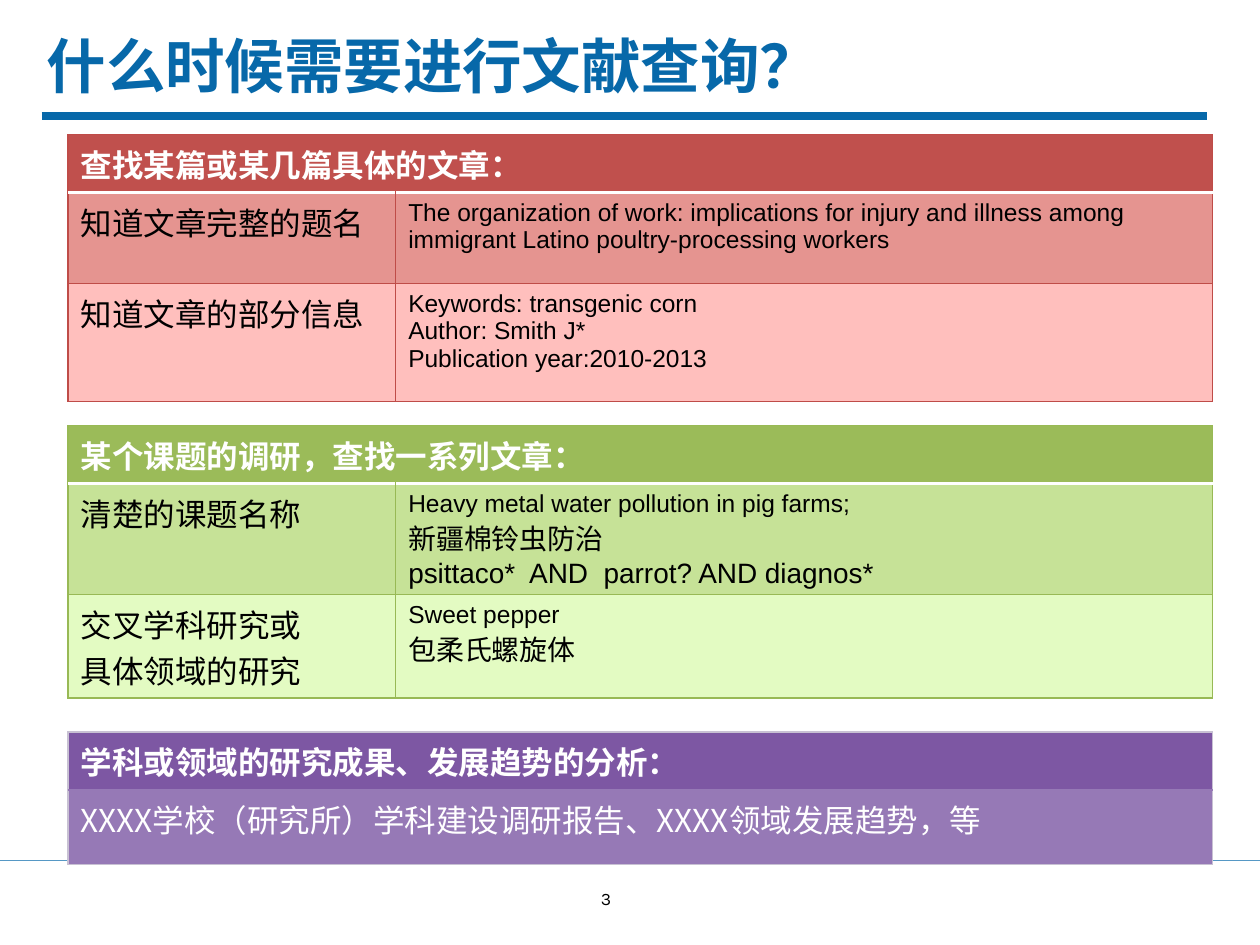
from lxml.etree import SubElement
from pptx import Presentation
from pptx.dml.color import RGBColor
from pptx.enum.shapes import MSO_CONNECTOR
from pptx.enum.text import MSO_ANCHOR, PP_ALIGN
from pptx.oxml import parse_xml
from pptx.oxml.ns import nsdecls, qn
from pptx.util import Inches, Pt

WIDTH, HEIGHT = 10, 7.5
LEFT, TABLE_WIDTH = 0.54, 9.08
HEADER_HEIGHT = 0.46
TWO_COLUMNS = (2.6, 6.48)
CJK, LATIN, NUMBER_FONT = "Noto Sans CJK SC", "Arial", "Karla"
COLORS = {
    "blue": "0768A9", "pale_blue": "5698C5", "white": "FFFFFF", "black": "000000",
    "red": "C0504D", "red_edge": "BF4C48", "red_mid": "E59490", "red_light": "FFBFBD",
    "green": "9BBB59", "green_edge": "98B955", "green_mid": "C6E297", "green_light": "E3FBC2",
    "purple": "7D57A3", "purple_edge": "C8C1D3", "purple_mid": "9679B6",
}


def rgb(name):
    """Return the named colour."""
    return RGBColor.from_string(COLORS[name])


def add_run(paragraph, text, size, color="black", font=CJK, bold=False):
    """Add one formatted run with an East Asian font."""
    run = paragraph.add_run()
    run.text = text
    run.font.size = Pt(size)
    run.font.name = font
    run.font.bold = bold
    run.font.color.rgb = rgb(color)
    SubElement(run.font._element, qn("a:ea")).set("typeface", CJK)


def add_rule(slide, left, right, top, color, weight):
    """Draw a horizontal line."""
    line = slide.shapes.add_connector(
        MSO_CONNECTOR.STRAIGHT, Inches(left), Inches(top), Inches(right), Inches(top))
    line.line.color.rgb = rgb(color)
    line.line.width = Pt(weight)
    SubElement(line._element.spPr, qn("a:effectLst"))


def set_borders(cell, edges):
    """Set left, right, top and bottom borders as (colour, points)."""
    properties = cell._tc.get_or_add_tcPr()
    for index, (side, (color, weight)) in enumerate(zip("LRTB", edges)):
        properties.insert(index, parse_xml(
            f'<a:ln{side} {nsdecls("a")} w="{Pt(weight)}"><a:solidFill>'
            f'<a:srgbClr val="{COLORS[color]}"/></a:solidFill></a:ln{side}>'))


def fill_cell(cell, lines, fill, color="black", bold=False):
    """Fill a cell and write its (text, size, font) lines."""
    cell.fill.solid()
    cell.fill.fore_color.rgb = rgb(fill)
    frame = cell.text_frame
    for index, (text, size, font) in enumerate(lines):
        paragraph = frame.add_paragraph() if index else frame.paragraphs[0]
        add_run(paragraph, text, size, color, font, bold)


def add_topic_table(slide, top, columns, heights, header, rows, fills, edge, divider, color="black"):
    """Add a table with a full-width header above its body rows."""
    row_heights = (HEADER_HEIGHT, *heights)
    table = slide.shapes.add_table(
        len(row_heights), len(columns), Inches(LEFT), Inches(top),
        Inches(TABLE_WIDTH), Inches(sum(row_heights))).table
    table.horz_banding = False
    for column, width in zip(table.columns, columns):
        column.width = Inches(width)
    for row, height in zip(table.rows, row_heights):
        row.height = Inches(height)
    thin = (edge, 0.75)
    for index, row in enumerate(table.rows):
        for cell in row.cells:
            set_borders(cell, (thin, thin, divider if index == 1 else thin,
                               divider if index == 0 else thin))
    if len(columns) > 1:
        table.cell(0, 0).merge(table.cell(0, len(columns) - 1))
    fill_cell(table.cell(0, 0), [(header, 18, CJK)], fills[0], "white", True)
    for row_index, (cells, fill) in enumerate(zip(rows, fills[1:]), 1):
        for column_index, lines in enumerate(cells):
            fill_cell(table.cell(row_index, column_index), lines, fill, color)


def add_title(slide, left, top, width, height):
    """Place the title and the rule below it."""
    title = slide.shapes.title
    title.left, title.top, title.width, title.height = map(Inches, (left, top, width, height))
    frame = title.text_frame
    frame.vertical_anchor = MSO_ANCHOR.MIDDLE
    frame.margin_left = Inches(0.2)
    frame.paragraphs[0].alignment = PP_ALIGN.LEFT
    add_run(frame.paragraphs[0], "什么时候需要进行文献查询？", 34, "blue", bold=True)
    add_rule(slide, 0.33, 9.58, 0.92, "blue", 5)


def add_footer(slide, top):
    """Place the footer line and the page number."""
    add_rule(slide, 0, WIDTH, top, "pale_blue", 0.75)
    box = slide.shapes.add_textbox(Inches(4.62), Inches(top + 0.17), Inches(0.38), Inches(0.27))
    box.text_frame.word_wrap = False
    box.text_frame.paragraphs[0].alignment = PP_ALIGN.CENTER
    add_run(box.text_frame.paragraphs[0], "3", 10, font=NUMBER_FONT)


def main():
    """Build and save the slide."""
    presentation = Presentation()
    presentation.slide_width, presentation.slide_height = Inches(WIDTH), Inches(HEIGHT)
    slide = presentation.slides.add_slide(presentation.slide_layouts[5])
    add_footer(slide, 6.83)
    add_title(slide, 0.17, 0, 9.45, 1.02)
    add_topic_table(
        slide, 1.07, TWO_COLUMNS, (0.72, 0.94), "查找某篇或某几篇具体的文章：",
        [[[("知道文章完整的题名", 18, CJK)],
          [("The organization of work: implications for injury and illness among "
            "immigrant Latino poultry-processing workers", 14, LATIN)]],
         [[("知道文章的部分信息", 18, CJK)],
          [("Keywords: transgenic corn", 14, LATIN),
           ("Author: Smith J*", 14, LATIN),
           ("Publication year:2010-2013", 14, LATIN)]]],
        ("red", "red_mid", "red_light"), "red_edge", ("white", 2))
    add_topic_table(
        slide, 3.38, TWO_COLUMNS, (0.88, 0.82), "某个课题的调研，查找一系列文章：",
        [[[("清楚的课题名称", 18, CJK)],
          [("Heavy metal water pollution in pig farms;", 14, LATIN),
           ("新疆棉铃虫防治", 16, LATIN),
           ("psittaco*  AND  parrot? AND diagnos*", 16, LATIN)]],
         [[("交叉学科研究或", 18, CJK), ("具体领域的研究", 18, CJK)],
          [("Sweet pepper", 14, LATIN), ("包柔氏螺旋体", 16, LATIN)]]],
        ("green", "green_mid", "green_light"), "green_edge", ("white", 2))
    add_topic_table(
        slide, 5.81, (TABLE_WIDTH,), (0.59,), "学科或领域的研究成果、发展趋势的分析：",
        [[[("XXXX学校（研究所）学科建设调研报告、XXXX领域发展趋势，等", 18, CJK)]]],
        ("purple", "purple_mid"), "purple_edge", ("purple_mid", 0.75), "white")
    presentation.save("out.pptx")


if __name__ == "__main__":
    main()
